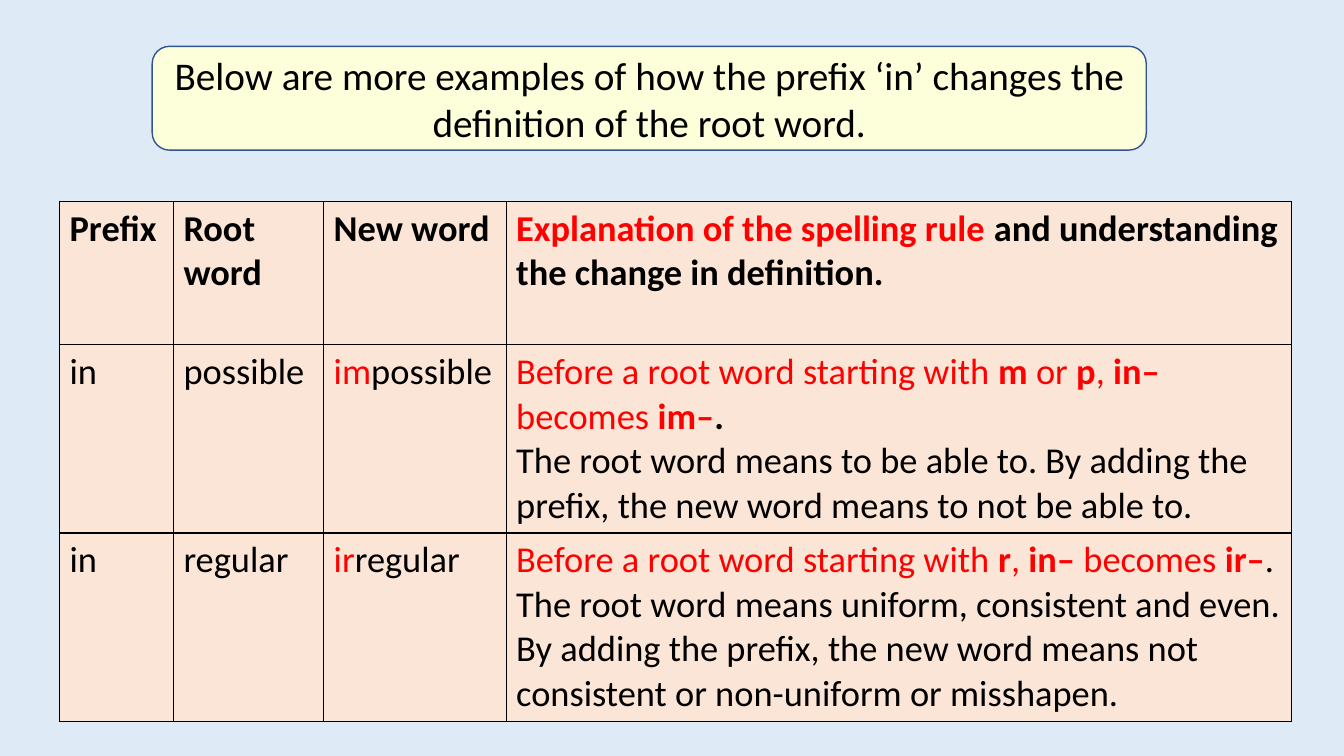
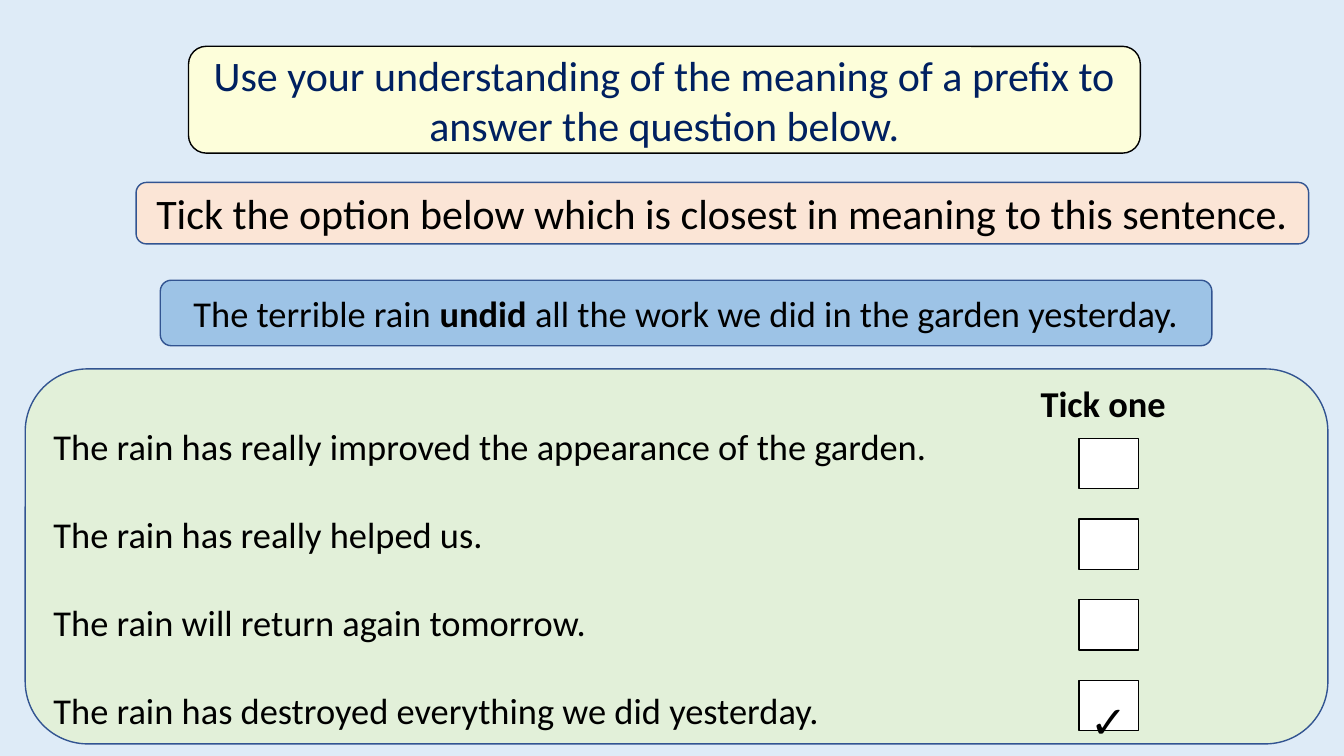
"""Two lesson slides on how prefixes change the meaning of root words."""
from lxml import etree
from pptx import Presentation
from pptx import util as u
from pptx.dml.color import RGBColor
from pptx.enum import shapes, text
from pptx.oxml.ns import qn

FONT = "Calibri"
BLACK, WHITE, RED, NAVY = "000000", "FFFFFF", "FF0000", "002060"
SKY, CREAM, PEACH, BLUE, GREEN = "DEEBF7", "FDFEDA", "FBE5D6", "9DC3E6", "E2F0D9"
EDGE = "325491"
BODY_SIZE = 26
LINE_PITCH = 31.7

# Each paragraph is a list of (text, style) runs; in a style, r is red and b is bold.
EXAMPLES_TITLE = "Below are more examples of how the prefix ‘in’ changes the definition of the root word."
EXAMPLES = [
    [
        [[("Prefix", "b")]],
        [[("Root", "b")], [("word", "b")]],
        [[("New word", "b")]],
        [[("Explanation of the spelling rule ", "rb"),
          ("and understanding the change in definition.", "b")]],
    ],
    [
        [[("in", "")]],
        [[("possible", "")]],
        [[("im", "r"), ("possible", "")]],
        [[("Before a root word starting with ", "r"), ("m ", "rb"), ("or ", "r"), ("p", "rb"),
          (", ", "r"), ("in– ", "rb"), ("becomes ", "r"), ("im–", "rb"), (".", "b")],
         [("The root word means to be able to. By adding the prefix, "
           "the new word means to not be able to.", "")]],
    ],
    [
        [[("in", "")]],
        [[("regular", "")]],
        [[("ir", "r"), ("regular", "")]],
        [[("Before a root word starting with ", "r"), ("r", "rb"), (", ", "r"), ("in– ", "rb"),
          ("becomes ", "r"), ("ir–", "rb"), (".", "")],
         [("The root word means uniform, consistent and even. By adding the prefix, the new word "
           "means not consistent or non-uniform or misshapen.", "")]],
    ],
]
COLUMNS = [1.13, 1.49, 1.81, 7.79]
ROWS = [1.42, 1.86, 1.86]

QUESTION_TITLE = "Use your understanding of the meaning of a prefix to answer the question below."
INSTRUCTION = [("Tick the option below which is closest in meaning to this sentence.", "")]
SENTENCE = [("The terrible rain ", ""), ("undid", "b"),
            (" all the work we did in the garden yesterday.", "")]
TICK_HEADING = [("Tick one", "b")]
OPTIONS = [
    "The rain has really improved the appearance of the garden.",
    "The rain has really helped us.",
    "The rain will return again tomorrow.",
    "The rain has destroyed everything we did yesterday.",
]
ANSWER = 3


def rgb(colour):
    """Turn a hex string into a colour."""
    return RGBColor.from_string(colour)


def write(frame, paragraphs, size=BODY_SIZE, colour=BLACK, align=text.PP_ALIGN.LEFT):
    """Fill a text frame with styled runs."""
    frame.word_wrap = True
    for i, runs in enumerate(paragraphs):
        paragraph = frame.add_paragraph() if i else frame.paragraphs[0]
        paragraph.alignment = align
        for words, style in runs:
            run = paragraph.add_run()
            run.text = words
            run.font.name, run.font.size = FONT, u.Pt(size)
            run.font.bold = "b" in style
            run.font.color.rgb = rgb(RED if "r" in style else colour)


def add_card(slide, place, fill, edge=EDGE, kind=shapes.MSO_SHAPE.ROUNDED_RECTANGLE):
    """Add an outlined, filled shape with its text anchored in the middle."""
    card = slide.shapes.add_shape(kind, *map(u.Inches, place))
    card.shadow.inherit = False
    card.fill.solid()
    card.fill.fore_color.rgb = rgb(fill)
    card.line.color.rgb = rgb(edge)
    card.line.width = u.Pt(1)
    card.text_frame.vertical_anchor = text.MSO_ANCHOR.MIDDLE
    return card


def add_titled_slide(prs, words, place, size, colour, edge):
    """Add a slide whose title sits on a cream card."""
    slide = prs.slides.add_slide(prs.slide_layouts[5])
    card = add_card(slide, place, CREAM, edge)
    slide.shapes._spTree.insert(2, card._element)
    title = slide.shapes.title
    title.left, title.top, title.width, title.height = map(u.Inches, place)
    frame = title.text_frame
    frame.auto_size = text.MSO_AUTO_SIZE.NONE
    frame.vertical_anchor = text.MSO_ANCHOR.MIDDLE
    write(frame, [[(words, "")]], size, colour, text.PP_ALIGN.CENTER)
    return slide


def style_cell(cell):
    """Give a table cell its black borders and peach fill."""
    properties = cell._tc.get_or_add_tcPr()
    for side in ("lnL", "lnR", "lnT", "lnB"):
        line = etree.SubElement(properties, qn("a:" + side), w=str(u.Pt(1)))
        fill = etree.SubElement(line, qn("a:solidFill"))
        etree.SubElement(fill, qn("a:srgbClr"), val=BLACK)
    cell.fill.solid()
    cell.fill.fore_color.rgb = rgb(PEACH)


def add_examples(slide):
    """Add the table of prefix examples."""
    place = (0.59, 2, sum(COLUMNS), sum(ROWS))
    table = slide.shapes.add_table(len(ROWS), len(COLUMNS), *map(u.Inches, place)).table
    table.first_row = table.horz_banding = False
    for column, width in zip(table.columns, COLUMNS):
        column.width = u.Inches(width)
    for row, height, contents in zip(table.rows, ROWS, EXAMPLES):
        row.height = u.Inches(height)
        for cell, paragraphs in zip(row.cells, contents):
            style_cell(cell)
            write(cell.text_frame, paragraphs)


def add_options(slide):
    """Add the panel of options with one tick box for each."""
    panel = add_card(slide, (0.25, 3.66, 12.92, 3.72), GREEN)
    write(panel.text_frame, [TICK_HEADING] + [[(option, "")] for option in OPTIONS])
    heading, _, *spaced = panel.text_frame.paragraphs
    heading._p.get_or_add_pPr().set("marL", str(u.Inches(9.79)))
    for paragraph in spaced:
        paragraph.space_before = u.Pt(LINE_PITCH)
    for i in range(len(OPTIONS)):
        place = (10.7, 4.35 + 0.8 * i, 0.59, 0.5)
        box = add_card(slide, place, WHITE, BLACK, shapes.MSO_SHAPE.RECTANGLE)
        if i == ANSWER:
            box.text_frame.margin_top, box.text_frame.margin_bottom = u.Inches(0.3), 0
            write(box.text_frame, [[("✓", "b")]], 32, align=text.PP_ALIGN.CENTER)


def main():
    """Build and save both slides."""
    prs = Presentation()
    prs.slide_width, prs.slide_height = u.Inches(13.33), u.Inches(7.5)
    background = prs.slide_master.background.fill
    background.solid()
    background.fore_color.rgb = rgb(SKY)

    examples = add_titled_slide(prs, EXAMPLES_TITLE, (1.51, 0.46, 9.86, 1.03), 28, BLACK, EDGE)
    add_examples(examples)

    question = add_titled_slide(prs, QUESTION_TITLE, (1.87, 0.46, 9.44, 1.06), 30, NAVY, BLACK)
    for runs, place, fill, size in (
        (INSTRUCTION, (1.35, 1.81, 11.63, 0.61), PEACH, 30),
        (SENTENCE, (1.59, 2.78, 10.43, 0.65), BLUE, BODY_SIZE),
    ):
        card = add_card(question, place, fill)
        write(card.text_frame, [runs], size, align=text.PP_ALIGN.CENTER)
    add_options(question)
    prs.save("out.pptx")


if __name__ == "__main__":
    main()
